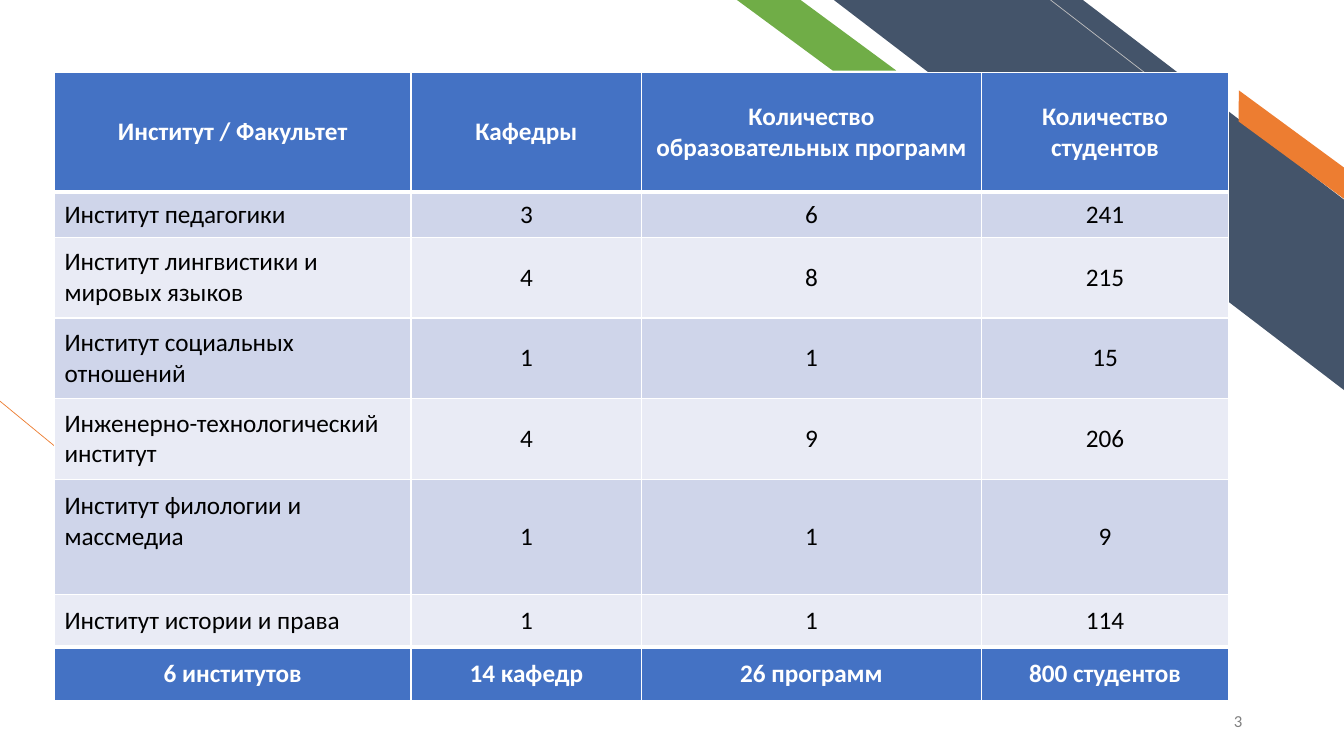
"""Build the slide that tabulates institutes, departments, programmes and students."""
from dataclasses import dataclass
from typing import Any

from lxml.etree import SubElement
from pptx import Presentation
from pptx.dml.color import RGBColor
from pptx.enum.shapes import MSO_CONNECTOR, MSO_SHAPE
from pptx.enum.text import MSO_ANCHOR, PP_ALIGN
from pptx.oxml import parse_xml
from pptx.oxml.ns import nsdecls, qn
from pptx.util import Emu, Inches, Pt


@dataclass(frozen=True)
class Theme:
    blue: str = "4472C4"
    slate: str = "44546A"
    orange: str = "ED7D31"
    green: str = "70AD47"
    silver: str = "BFBFBF"
    gray: str = "808080"
    white: str = "FFFFFF"
    black: str = "000000"
    bands: tuple[str, str] = ("CFD5EA", "E9EBF5")
    font: str = "Calibri"
    table_size: float = 18
    number_size: float = 12
    hairline: float = 0.5
    thin_border: float = 1
    thick_border: float = 3


THEME = Theme()
SLIDE_WIDTH, SLIDE_HEIGHT = Inches(13.33), Inches(7.5)


@dataclass(frozen=True)
class Box:
    left: float
    top: float
    width: float
    height: float

    def emu(self) -> tuple[Emu, Emu, Emu, Emu]:
        return across(self.left), down(self.top), across(self.width), down(self.height)


@dataclass(frozen=True)
class Stripe:
    preset: MSO_SHAPE
    box: Box
    slant: float
    color: str
    rotation: float = 0


@dataclass(frozen=True)
class Stroke:
    start: tuple[float, float]
    end: tuple[float, float]
    color: str


DECORATIONS = [
    Stroke((15.6, 75.87), (0, 53.07), THEME.orange),
    Stripe(MSO_SHAPE.DIAGONAL_STRIPE, Box(62.04, 0, 37.96, 51.6), 0.512, THEME.slate),
    Stroke((88.37, 14), (78.17, 0), THEME.silver),
    Stripe(MSO_SHAPE.PARALLELOGRAM, Box(90.55, 17.47, 11.1, 3.33), 0.72, THEME.orange, 36.3),
    Stripe(MSO_SHAPE.PARALLELOGRAM, Box(54.84, 0, 11.85, 9.33), 1.356, THEME.green),
]
PAGE_NUMBER = "3"
PAGE_NUMBER_BOX = Box(70.67, 92.67, 22.51, 5.33)
TABLE_BOX = Box(4.05, 9.6, 87.4, 83.1)
COLUMN_WIDTHS = [26.54, 17.16, 25.26, 18.43]
ROW_HEIGHTS = [15.8, 6, 10.67, 10.67, 10.67, 15.2, 7.03, 7.03]
ROWS = [
    ("Институт / Факультет", "Кафедры", "Количество образовательных программ", "Количество студентов"),
    ("Институт педагогики", "3", "6", "241"),
    ("Институт лингвистики и мировых языков", "4", "8", "215"),
    ("Институт социальных отношений", "1", "1", "15"),
    ("Инженерно-технологический институт", "4", "9", "206"),
    ("Институт филологии и массмедиа", "1", "1", "9"),
    ("Институт истории и права", "1", "1", "114"),
    ("6 институтов", "14 кафедр", "26 программ", "800 студентов"),
]
RAISED_CELL = (5, 0)
RAISED_MARGIN = 4.8


def across(percent: float) -> Emu:
    return Emu(round(SLIDE_WIDTH * percent / 100))


def down(percent: float) -> Emu:
    return Emu(round(SLIDE_HEIGHT * percent / 100))


def apply(target: Any, values: dict[str, Any]) -> None:
    for name, value in values.items():
        setattr(target, name, value)


def paint(fill: Any, color: str) -> None:
    fill.solid()
    fill.fore_color.rgb = RGBColor.from_string(color)


def draw_stripe(slide: Any, stripe: Stripe) -> None:
    shape = slide.shapes.add_shape(stripe.preset, *stripe.box.emu())
    shape.shadow.inherit = False
    shape.adjustments[0] = stripe.slant
    shape.rotation = stripe.rotation
    shape.element.spPr.find(qn("a:xfrm")).set("flipH", "1")
    paint(shape.fill, stripe.color)
    shape.line.fill.background()


def draw_stroke(slide: Any, stroke: Stroke) -> None:
    connector = slide.shapes.add_connector(
        MSO_CONNECTOR.STRAIGHT, across(stroke.start[0]), down(stroke.start[1]),
        across(stroke.end[0]), down(stroke.end[1]))
    connector.line.width = Pt(THEME.hairline)
    paint(connector.line.fill, stroke.color)
    SubElement(connector.element.spPr, qn("a:effectLst"))


def write(paragraph: Any, text: str, alignment: PP_ALIGN, font: dict[str, Any], color: str) -> None:
    paragraph.alignment = alignment
    run = paragraph.add_run()
    run.text = text
    apply(run.font, font)
    run.font.color.rgb = RGBColor.from_string(color)


def draw_page_number(slide: Any) -> None:
    frame = slide.shapes.add_textbox(*PAGE_NUMBER_BOX.emu()).text_frame
    apply(frame, {"word_wrap": True, "vertical_anchor": MSO_ANCHOR.MIDDLE})
    font = {"name": THEME.font, "size": Pt(THEME.number_size)}
    write(frame.paragraphs[0], PAGE_NUMBER, PP_ALIGN.RIGHT, font, THEME.gray)


def border_cell(cell: Any, widths: dict[str, float]) -> None:
    for position, (side, width) in enumerate(widths.items()):
        cell._tc.get_or_add_tcPr().insert(position, parse_xml(
            f'<a:ln{side} {nsdecls("a")} w="{Pt(width)}"><a:solidFill>'
            f'<a:srgbClr val="{THEME.white}"/></a:solidFill></a:ln{side}>'))


def draw_table(slide: Any) -> None:
    table = slide.shapes.add_table(len(ROWS), len(COLUMN_WIDTHS), *TABLE_BOX.emu()).table
    table.horz_banding = False
    for column, width in zip(table.columns, COLUMN_WIDTHS):
        column.width = across(width)
    last = len(ROWS) - 1
    thin, thick = THEME.thin_border, THEME.thick_border
    for row_index, texts in enumerate(ROWS):
        table.rows[row_index].height = down(ROW_HEIGHTS[row_index])
        emphasized = row_index in (0, last)
        fill = THEME.blue if emphasized else THEME.bands[(row_index - 1) % 2]
        color = THEME.white if emphasized else THEME.black
        font = {"name": THEME.font, "size": Pt(THEME.table_size), "bold": emphasized}
        borders = {"L": thin, "R": thin,
                   "T": thick if row_index in (1, last) else thin,
                   "B": thick if row_index in (0, last - 1) else thin}
        for column_index, text in enumerate(texts):
            cell = table.cell(row_index, column_index)
            cell.vertical_anchor = MSO_ANCHOR.MIDDLE
            if (row_index, column_index) == RAISED_CELL:
                cell.margin_bottom = down(RAISED_MARGIN)
            paint(cell.fill, fill)
            border_cell(cell, borders)
            centered = emphasized or column_index > 0
            write(cell.text_frame.paragraphs[0], text,
                  PP_ALIGN.CENTER if centered else PP_ALIGN.LEFT, font, color)


def main() -> None:
    presentation = Presentation()
    apply(presentation, {"slide_width": SLIDE_WIDTH, "slide_height": SLIDE_HEIGHT})
    slide = presentation.slides.add_slide(presentation.slide_layouts[6])
    for decoration in DECORATIONS:
        draw = draw_stripe if isinstance(decoration, Stripe) else draw_stroke
        draw(slide, decoration)
    draw_table(slide)
    draw_page_number(slide)
    presentation.save("out.pptx")


if __name__ == "__main__":
    main()
